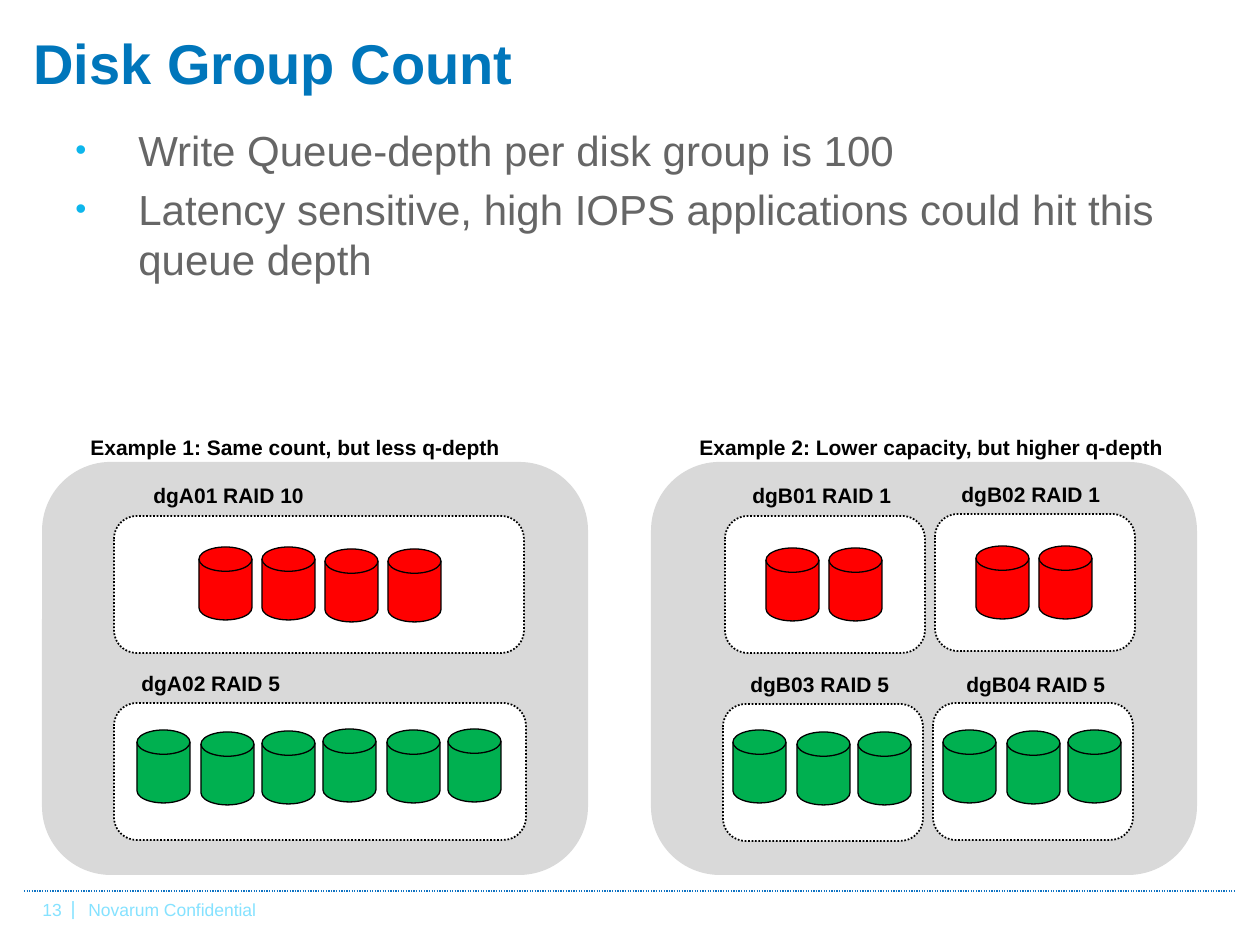
from lxml.etree import SubElement
from pptx import Presentation
from pptx.dml.color import RGBColor
from pptx.enum.dml import MSO_LINE
from pptx.enum.shapes import MSO_CONNECTOR, MSO_SHAPE as SHAPE
from pptx.enum.text import MSO_ANCHOR as ANCHOR
from pptx.oxml.ns import qn
from pptx.util import Pt

PX_PER_INCH = 126
RED, GREEN = "FF0000", "00B050"


def px(length):
    return round(length * 914400 / PX_PER_INCH)


def rgb(value):
    return RGBColor.from_string(value)


class SlideBuilder:
    font = "Arial"
    black, white, panel_gray = "000000", "FFFFFF", "D9D9D9"
    body_gray, bullet_blue = "666666", "0DB6EC"
    title_blue, rule_blue, footer_blue = "0076BB", "0F73C3", "85E2FF"

    def __init__(self, slide):
        self.slide = slide

    def text(self, box, lines, size, color, bold=False, anchor=ANCHOR.TOP, bulleted=False):
        frame = self.slide.shapes.add_textbox(*map(px, box)).text_frame
        frame.word_wrap = True
        frame.vertical_anchor = anchor
        frame.text = "\n".join(lines)
        for index, paragraph in enumerate(frame.paragraphs):
            if bulleted:
                self.bullet(paragraph)
                if index:
                    paragraph.space_before = Pt(5)
            font = paragraph.font
            font.name, font.size, font.bold = self.font, Pt(size), bold
            font.color.rgb = rgb(color)

    def bullet(self, paragraph):
        props = paragraph._p.get_or_add_pPr()
        props.set("marL", str(px(63)))
        props.set("indent", str(px(-63)))
        color = SubElement(props, qn("a:buClr"))
        SubElement(color, qn("a:srgbClr"), val=self.bullet_blue)
        SubElement(props, qn("a:buSzPct"), val="75000")
        SubElement(props, qn("a:buFont"), typeface=self.font)
        SubElement(props, qn("a:buChar"), char="•")

    def label(self, left, top, width, words):
        self.text((left, top, width, 38), [words], 12, self.black, bold=True)

    def shape(self, kind, box, fill, line_width=None, dash=None):
        shape = self.slide.shapes.add_shape(kind, *map(px, box))
        shape.shadow.inherit = False
        shape.fill.solid()
        shape.fill.fore_color.rgb = rgb(fill)
        if line_width is None:
            shape.line.fill.background()
            return
        shape.line.color.rgb = rgb(self.black)
        shape.line.width = Pt(line_width)
        if dash:
            shape.line.dash_style = dash

    def panel(self, left, top):
        self.shape(SHAPE.ROUNDED_RECTANGLE, (left, top, 546, 413), self.panel_gray)

    def disk_group(self, left, top, width, disk_color, disks):
        self.shape(SHAPE.ROUNDED_RECTANGLE, (left, top, width, 137), self.white,
                   1, MSO_LINE.ROUND_DOT)
        for disk_left, disk_top in disks:
            self.shape(SHAPE.FLOWCHART_MAGNETIC_DISK, (disk_left, disk_top, 53, 73),
                       disk_color, 0.75)

    def rule(self, left, right, y):
        line = self.slide.shapes.add_connector(
            MSO_CONNECTOR.STRAIGHT, px(left), px(y), px(right), px(y))
        line.line.color.rgb = rgb(self.rule_blue)
        line.line.width = Pt(0.75)
        line.line.dash_style = MSO_LINE.ROUND_DOT
        SubElement(line._element.spPr, qn("a:effectLst"))


def pair(left, top):
    return [(left, top), (left + 63, top)]


def triple(left, top, drops):
    return [(left + step, top + drop) for step, drop in zip((0, 64, 125), drops)]


def main():
    deck = Presentation()
    deck.slide_width, deck.slide_height = px(1260), px(945)
    page = SlideBuilder(deck.slides.add_slide(deck.slide_layouts[6]))

    # Footer
    page.rule(24, 1236, 891)
    for box, words, size in [
        ((30, 893, 64, 34), "13", 10),
        ((76, 893, 630, 59), "Novarum Confidential", 10),
        ((59, 890, 24, 34), "|", 11),
    ]:
        page.text(box, [words], size, page.footer_blue)

    # Title and key points
    page.text((21, 21, 941, 81), ["Disk Group Count"], 32, page.title_blue,
              bold=True, anchor=ANCHOR.BOTTOM)
    page.text((63, 118, 1134, 622), [
        "Write Queue-depth per disk group is 100",
        "Latency sensitive, high IOPS applications could hit this queue depth",
    ], 24, page.body_gray, bulleted=True)

    # Example panels with their headings
    for panel_left, heading_left, width, heading in [
        (42, 78, 446, "Example 1: Same count, but less q-depth"),
        (651, 687, 510, "Example 2: Lower capacity, but higher q-depth"),
    ]:
        page.panel(panel_left, 462)
        page.label(heading_left, 428, width, heading)

    # Disk groups: label, label place, frame place, disks
    for name, label, frame, color, disks in [
        ("dgA01 RAID 10", (141, 476, 195), (114, 516, 410), RED,
         pair(199, 547) + pair(325, 549)),
        ("dgA02 RAID 5", (129, 664, 173), (114, 703, 412), GREEN,
         triple(137, 730, (0, 2, 1)) + triple(323, 729, (0, 1, 0))),
        ("dgB01 RAID 1", (740, 476, 173), (725, 516, 200), RED, pair(766, 548)),
        ("dgB02 RAID 1", (949, 475, 173), (935, 514, 200), RED, pair(976, 546)),
        ("dgB03 RAID 5", (738, 665, 173), (723, 704, 200), GREEN,
         triple(733, 730, (0, 2, 2))),
        ("dgB04 RAID 5", (954, 665, 173), (933, 703, 200), GREEN,
         triple(943, 730, (0, 1, 0))),
    ]:
        page.disk_group(*frame, color, disks)
        page.label(*label, name)

    deck.save("out.pptx")


if __name__ == "__main__":
    main()
